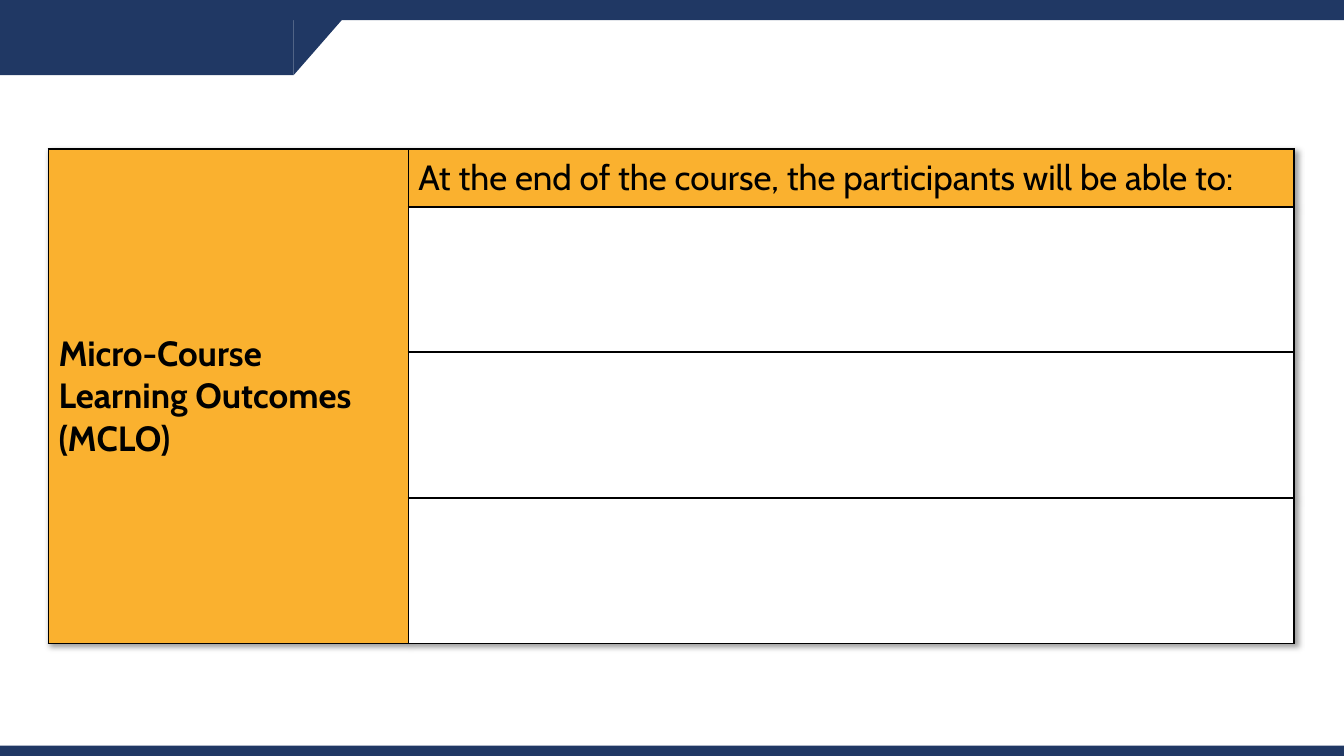
from dataclasses import dataclass
from lxml.etree import SubElement
from pptx import Presentation
from pptx.dml.color import RGBColor
from pptx.enum.shapes import MSO_SHAPE
from pptx.enum.text import MSO_ANCHOR
from pptx.oxml import parse_xml
from pptx.oxml.ns import nsdecls, qn
from pptx.util import Pt


@dataclass(frozen=True)
class Theme:
    navy: str = "203864"
    amber: str = "FAB12F"
    white: str = "FFFFFF"
    black: str = "000000"
    font: str = "Cabin"
    size: float = 25
    thin: float = 1
    thick: float = 1.5


THEME = Theme()
WIDTH, HEIGHT = 960, 540


def paint(fill, color):
    fill.solid()
    fill.fore_color.rgb = RGBColor.from_string(color)


def add_block(slide, kind, left, top, width, height, turn=0):
    block = slide.shapes.add_shape(kind, Pt(left), Pt(top), Pt(width), Pt(height))
    block.rotation = turn
    block.shadow.inherit = False
    paint(block.fill, THEME.navy)
    block.line.fill.background()


def set_edges(cell, left, top, right, bottom):
    props = cell._tc.get_or_add_tcPr()
    edges = {"lnL": left, "lnT": top, "lnR": right, "lnB": bottom}
    for place, side in enumerate(("lnL", "lnR", "lnT", "lnB")):
        line = parse_xml(
            f'<a:{side} {nsdecls("a")} w="{Pt(edges[side])}"><a:solidFill>'
            f'<a:srgbClr val="{THEME.black}"/></a:solidFill></a:{side}>'
        )
        props.insert(place, line)


def set_text(cell, text, bold):
    cell.text_frame.text = text
    font = cell.text_frame.paragraphs[0].runs[0].font
    font.name = THEME.font
    font.size = Pt(THEME.size)
    font.bold = bold
    font.color.rgb = RGBColor.from_string(THEME.black)


def add_shade(table):
    effects = parse_xml(f'<a:effectLst {nsdecls("a")}/>')
    shade = SubElement(
        effects, qn("a:outerShdw"), blurRad=str(Pt(4)), dist=str(Pt(3)),
        dir="2700000", algn="tl", rotWithShape="0",
    )
    color = SubElement(shade, qn("a:srgbClr"), val=THEME.black)
    SubElement(color, qn("a:alpha"), val="40000")
    table._tbl.tblPr.insert(0, effects)


def add_goals(slide, left, top, widths, heights):
    frame = slide.shapes.add_table(
        len(heights), len(widths), Pt(left), Pt(top), Pt(sum(widths)), Pt(sum(heights))
    )
    table = frame.table
    table.first_row = table.horz_banding = False
    for col, width in zip(table.columns, widths):
        col.width = Pt(width)
    for row, height in zip(table.rows, heights):
        row.height = Pt(height)

    thin, thick = THEME.thin, THEME.thick
    last = len(heights) - 1
    for index in range(len(heights)):
        label, goal = table.cell(index, 0), table.cell(index, 1)
        paint(label.fill, THEME.amber)
        paint(goal.fill, THEME.white if index else THEME.amber)
        set_edges(label, thick, thick, thin, thin)
        set_edges(goal, thin, thick, thick, thin if index == last else thick)
        label.vertical_anchor = goal.vertical_anchor = MSO_ANCHOR.MIDDLE

    table.cell(0, 0).merge(table.cell(last, 0))
    set_text(table.cell(0, 0), "Micro-Course Learning Outcomes (MCLO)", True)
    set_text(
        table.cell(0, 1),
        "At the end of the course, the participants will be able to:",
        False,
    )
    add_shade(table)


def main():
    deck = Presentation()
    deck.slide_width, deck.slide_height = Pt(WIDTH), Pt(HEIGHT)
    slide = deck.slides.add_slide(deck.slide_layouts[6])

    add_block(slide, MSO_SHAPE.RECTANGLE, 0, 1.5, 209.7, 52.2)
    add_block(slide, MSO_SHAPE.RECTANGLE, 0, 0, WIDTH, 14.4)
    add_block(slide, MSO_SHAPE.RIGHT_TRIANGLE, 206.9, 10.3, 46.2, 40.4, 90)
    add_block(slide, MSO_SHAPE.RECTANGLE, 0, 532.6, WIDTH, 7.4)
    add_goals(slide, 34.6, 106.6, [257, 633], [41] + [104] * 3)
    deck.save("out.pptx")


if __name__ == "__main__":
    main()
